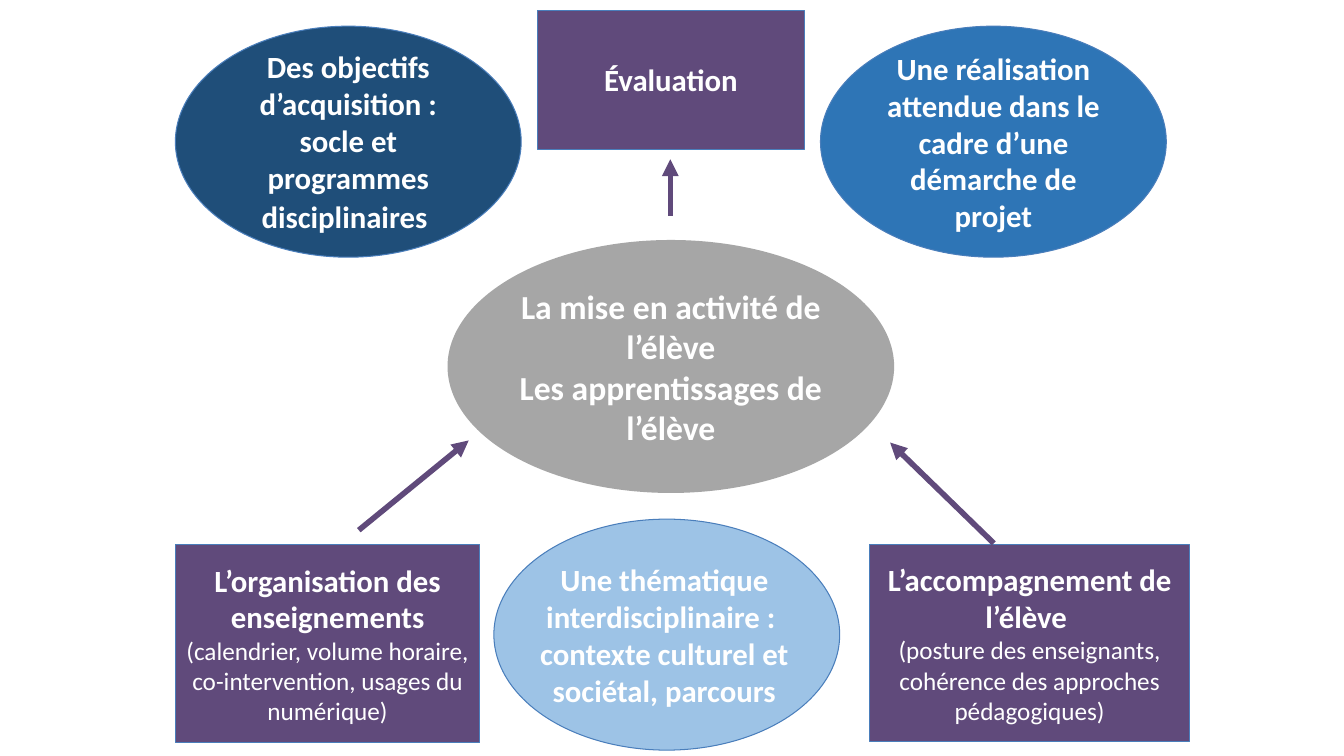
from dataclasses import dataclass

from lxml import etree
from pptx import Presentation
from pptx import util as u
from pptx.dml import color
from pptx.enum import shapes, text
from pptx.oxml import ns


@dataclass(frozen=True)
class Theme:
    font: str = "Calibri"
    white: str = "FFFFFF"
    grey: str = "A6A6A6"
    navy: str = "1F4E79"
    blue: str = "2E75B6"
    sky: str = "9DC3E6"
    purple: str = "604A7B"
    outline: str = "4A7EBB"
    core_size: int = 24
    title_size: int = 22
    detail_size: int = 18
    outline_width: float = 0.75
    arrow_width: float = 4


THEME = Theme()
OVAL = shapes.MSO_SHAPE.OVAL
RECTANGLE = shapes.MSO_SHAPE.RECTANGLE
OVAL_SIZE = (247, 165)


def rgb(value):
    return color.RGBColor.from_string(value)


def points(*values):
    return [u.Pt(value) for value in values]


def add_span(para, words, size=THEME.title_size, bold=True, tint=THEME.white):
    span = para.add_run()
    span.text = words
    span.font.name = THEME.font
    span.font.size = u.Pt(size)
    span.font.bold = bold
    span.font.color.rgb = rgb(tint)


def add_text(group, area, paragraphs):
    frame = group.shapes.add_textbox(*points(*area)).text_frame
    frame.word_wrap = True
    frame.vertical_anchor = text.MSO_ANCHOR.MIDDLE
    frame.margin_left = frame.margin_right = u.Pt(3.6)
    frame.margin_top = frame.margin_bottom = u.Pt(3.6)
    for index, spans in enumerate(paragraphs):
        para = frame.add_paragraph() if index else frame.paragraphs[0]
        para.alignment = text.PP_ALIGN.CENTER
        for words, style in spans:
            add_span(para, words, **style)


def add_node(page, kind, area, fill, paragraphs, inset=(0, 0), shift=0, outlined=True):
    group = page.shapes.add_group_shape()
    box = group.shapes.add_shape(kind, *points(*area))
    box.shadow.inherit = False
    box.fill.solid()
    box.fill.fore_color.rgb = rgb(fill)
    if outlined:
        box.line.color.rgb = rgb(THEME.outline)
        box.line.width = u.Pt(THEME.outline_width)
    else:
        box.line.fill.background()
    left, top, width, height = area
    across, down = inset
    label_area = (left + across + shift, top + down, width - 2 * across, height - 2 * down)
    add_text(group, label_area, paragraphs)
    return group


def add_arrow(group, start, end):
    arrow = group.shapes.add_connector(
        shapes.MSO_CONNECTOR.STRAIGHT, *points(*start, *end)
    )
    arrow.line.color.rgb = rgb(THEME.purple)
    arrow.line.width = u.Pt(THEME.arrow_width)
    etree.SubElement(arrow.line._get_or_add_ln(), ns.qn("a:tailEnd"), type="triangle")
    etree.SubElement(arrow._element.spPr, ns.qn("a:effectLst"))


def add_core(page):
    style = {"size": THEME.core_size}
    lines = ["La mise en activité de l’élève", "Les apprentissages de l’élève"]
    add_node(
        page, OVAL, (319.7, 171.4, 319, 180.7), THEME.grey,
        [[(line, style)] for line in lines], inset=(46.8, 30.5), outlined=False,
    )


def add_aims(page):
    goals = "Des objectifs d’acquisition : socle et programmes disciplinaires"
    outcome = "Une réalisation attendue dans le cadre d’une démarche de projet"
    topic = ["Une thématique interdisciplinaire : ", "contexte culturel et sociétal, parcours"]
    add_node(
        page, OVAL, (125.3, 18.7, *OVAL_SIZE), THEME.navy,
        [[(goals, {}), (" ", {"size": THEME.core_size})]], inset=(36, 13),
    )
    add_node(
        page, OVAL, (586.1, 18.7, *OVAL_SIZE), THEME.blue,
        [[(outcome, {})]], inset=(36, 13.8),
    )
    add_node(
        page, OVAL, (352.8, 370.8, *OVAL_SIZE), THEME.sky,
        [[(line, {})] for line in topic], inset=(17, 13.8), shift=-1.8,
    )


def add_levers(page):
    detail = {"size": THEME.detail_size, "bold": False}
    support = add_node(
        page, RECTANGLE, (621.4, 388.8, 228.2, 141.1), THEME.purple,
        [
            [("L’accompagnement de l’élève ", {})],
            [("(posture des enseignants, cohérence des approches pédagogiques)", detail)],
        ],
        inset=(0, 9.4),
    )
    add_arrow(support, (709.9, 388.1), (635.8, 316.1))
    teaching = add_node(
        page, RECTANGLE, (125.3, 388.8, 217.4, 141.8), THEME.purple,
        [[
            ("L’organisation des enseignements ", {}),
            ("(calendrier, volume horaire, co-intervention, usages du numérique)", detail),
        ]],
        inset=(0, 9.7),
    )
    add_arrow(teaching, (256.3, 378.7), (334.8, 314.6))
    review = add_node(
        page, RECTANGLE, (383.8, 7.2, 190.8, 99.4), THEME.purple,
        [[("Évaluation", {})]], inset=(0, 33),
    )
    add_arrow(review, (478.8, 154.1), (478.8, 113.8))


def main():
    deck = Presentation()
    deck.slide_width, deck.slide_height = points(960, 540)
    page = deck.slides.add_slide(deck.slide_layouts[6])
    add_core(page)
    add_aims(page)
    add_levers(page)
    deck.save("out.pptx")


if __name__ == "__main__":
    main()
